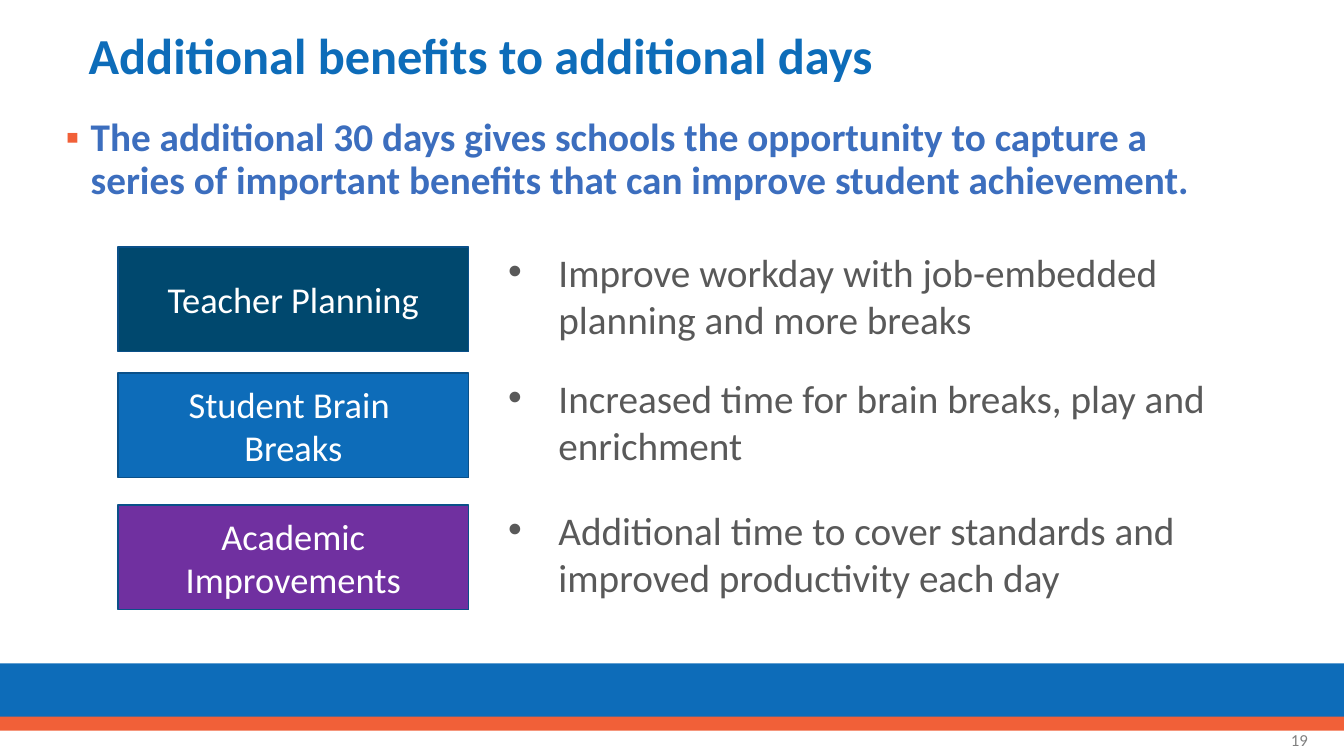
from lxml import etree
from pptx import Presentation
from pptx.dml.color import RGBColor
from pptx.enum import shapes, text
from pptx.oxml.ns import qn
from pptx.util import Inches, Pt

TITLE = "Additional benefits to additional days"
INTRO = ("The additional 30 days gives schools the opportunity to capture a "
         "series of important benefits that can improve student achievement.")
PAGE = "19"
BANDS = [(6.58, 0.58, "0D6CB9"), (7.11, 0.14, "F16038")]
BENEFITS = [
    (2.45, "Teacher Planning", "00486E",
     "Improve workday with job-embedded planning and more breaks"),
    (3.7, "Student Brain \vBreaks", "0D6CB9",
     "Increased time for brain breaks, play and enrichment"),
    (5.01, "Academic Improvements", "7030A0",
     "Additional time to cover standards and improved productivity each day"),
]
WIDTH, HEIGHT = 13.33, 7.5
ROW_H = 1.04
TEXT_RISE = 0.04


def rgb(value):
    return RGBColor.from_string(value)


def write(sp, content, size, color, bold=False, align=text.PP_ALIGN.LEFT,
          anchor=text.MSO_ANCHOR.MIDDLE):
    tf = sp.text_frame
    tf.text = content
    tf.word_wrap = True
    tf.auto_size = text.MSO_AUTO_SIZE.NONE
    tf.vertical_anchor = anchor
    p = tf.paragraphs[0]
    p.alignment = align
    p.space_before = Pt(0)
    for r in p.runs:
        r.font.name = "Calibri"
        r.font.size = Pt(size)
        r.font.bold = bold
        r.font.color.rgb = rgb(color)
    return p


def place(sp, left, top, width, height):
    sp.left, sp.top = Inches(left), Inches(top)
    sp.width, sp.height = Inches(width), Inches(height)


def bullet(p, char, color, margin, hang):
    pPr = p._p.get_or_add_pPr()
    pPr.set("marL", str(Inches(margin)))
    pPr.set("indent", str(-Inches(hang)))
    clr = etree.SubElement(pPr, qn("a:buClr"))
    etree.SubElement(clr, qn("a:srgbClr"), val=color)
    etree.SubElement(pPr, qn("a:buFont"), typeface="Arial")
    etree.SubElement(pPr, qn("a:buChar"), char=char)


def rectangle(s, left, top, width, height, fill):
    sp = s.shapes.add_shape(shapes.MSO_SHAPE.RECTANGLE, Inches(left),
                            Inches(top), Inches(width), Inches(height))
    sp.shadow.inherit = False
    sp.fill.solid()
    sp.fill.fore_color.rgb = rgb(fill)
    sp.line.fill.background()
    return sp


def text_box(s, left, top, width, height):
    return s.shapes.add_textbox(Inches(left), Inches(top),
                                Inches(width), Inches(height))


def main():
    prs = Presentation()
    prs.slide_width, prs.slide_height = Inches(WIDTH), Inches(HEIGHT)
    s = prs.slides.add_slide(prs.slide_layouts[1])

    for top, height, fill in BANDS:
        rectangle(s, 0, top, WIDTH, height, fill)

    title, body = s.shapes.title, s.placeholders[1]
    place(title, 0.78, 0.17, 12.16, 0.82)
    p = write(title, TITLE, 36, "0D6CB9", bold=True)
    p.line_spacing = 0.9

    place(body, 0.55, 1.12, 11.62, 4.76)
    p = write(body, INTRO, 28, "3C6EBE", bold=True,
              anchor=text.MSO_ANCHOR.TOP)
    p.line_spacing = 0.9
    bullet(p, "▪", "F16038", 0.25, 0.25)

    for top, label, fill, detail in BENEFITS:
        sp = rectangle(s, 1.17, top, 3.48, ROW_H, fill)
        sp.line.color.rgb = rgb("0A5089")
        sp.line.width = Pt(1)
        write(sp, label, 26, "FFFFFF", align=text.PP_ALIGN.CENTER)
        sp = text_box(s, 4.44, top - TEXT_RISE, 7.92, ROW_H)
        p = write(sp, detail, 28, "595959", anchor=text.MSO_ANCHOR.TOP)
        bullet(p, "•", "595959", 1, 0.5)

    sp = text_box(s, 10.07, 7.14, 3, 0.4)
    write(sp, PAGE, 12, "808080", align=text.PP_ALIGN.RIGHT)

    prs.save("out.pptx")


if __name__ == "__main__":
    main()
